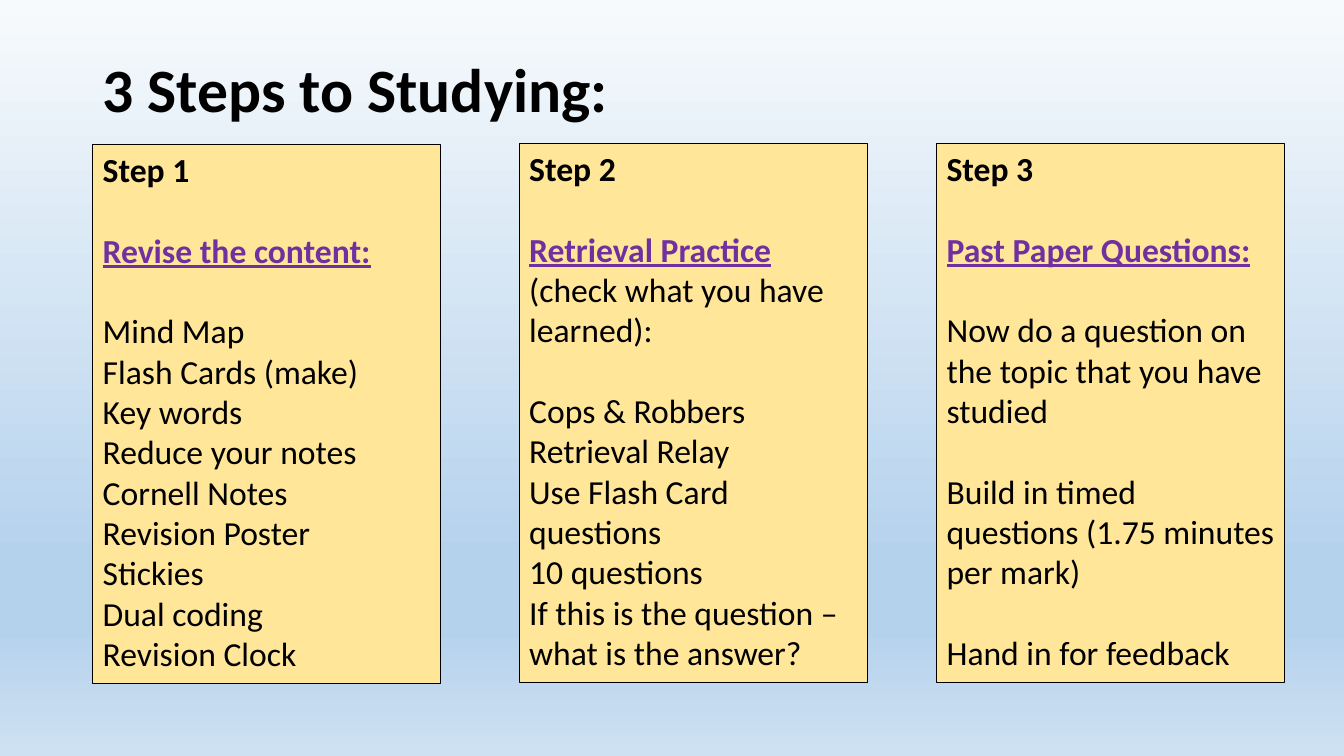
from lxml.etree import SubElement
from pptx import Presentation
from pptx.dml.color import RGBColor as RGB
from pptx.enum.shapes import MSO_SHAPE as Shape
from pptx.enum.text import MSO_ANCHOR as Anchor, MSO_AUTO_SIZE as Auto, PP_ALIGN as Align
from pptx.oxml.ns import qn
from pptx.util import Inches, Pt

COLORS = {"ink": "000000", "head": "7030A0", "card": "FFE699"}
SKY = [(0, "F7FAFD"), (74, "B5D2EC"), (83, "B5D2EC"), (100, "CEE1F2")]

# Each step: left, top, heading, rest of the heading line, groups of lines
STEPS = [
    (0.92, 1.43, "Revise the content:", "", [
        ["Mind Map", "Flash Cards (make)", "Key words", "Reduce your notes",
         "Cornell Notes", "Revision Poster", "Stickies", "Dual coding",
         "Revision Clock"]]),
    (5.15, 1.42, "Retrieval Practice ", "(check what you have learned):", [
        ["Cops & Robbers", "Retrieval Relay", "Use Flash Card questions",
         "10 questions", "If this is the question – what is the answer?"]]),
    (9.29, 1.42, "Past Paper Questions:", "", [
        ["Now do a question on the topic that you have studied"],
        ["Build in timed questions (1.75 minutes per mark)"],
        ["Hand in for feedback"]]),
]


class Deck:
    font = "Calibri"
    size = 24
    gap = 28.8  # height of one line of text, in points

    def __init__(self):
        self.prs = Presentation()
        self.prs.slide_width = Inches(13.33)
        self.prs.slide_height = Inches(7.5)
        self.slide = self.prs.slides.add_slide(self.prs.slide_layouts[6])

    def sky(self, stops):
        fill = self.slide.background.fill
        fill.gradient()
        fill.gradient_angle = 270
        bag = next(self.slide.background._cSld.iter(qn("a:gsLst")))
        for stop in list(bag):
            bag.remove(stop)
        for pos, color in stops:
            stop = SubElement(bag, qn("a:gs"), pos=str(pos * 1000))
            SubElement(stop, qn("a:srgbClr"), val=color)

    def run(self, para, text, size=size, color="ink", bold=False, line=False):
        run = para.add_run()
        run.text = text
        font = run.font
        font.name, font.size = self.font, Pt(size)
        font.bold, font.underline = bold, line
        font.color.rgb = RGB.from_string(COLORS[color])

    def title(self, text, left, top, width, height):
        box = self.slide.shapes.add_textbox(
            Inches(left), Inches(top), Inches(width), Inches(height))
        frame = box.text_frame
        frame.word_wrap = True
        frame.vertical_anchor = Anchor.MIDDLE
        para = frame.paragraphs[0]
        para.line_spacing = 0.9
        self.run(para, text, size=44, bold=True)

    def card(self, name, left, top, head, tail, groups):
        box = self.slide.shapes.add_shape(
            Shape.RECTANGLE, Inches(left), Inches(top), Inches(3.45), Inches(5.35))
        box.shadow.inherit = False
        box.fill.solid()
        box.fill.fore_color.rgb = RGB.from_string(COLORS["card"])
        box.line.color.rgb = RGB.from_string(COLORS["ink"])
        box.line.width = Pt(0.75)
        frame = box.text_frame
        frame.word_wrap = True
        frame.auto_size = Auto.SHAPE_TO_FIT_TEXT
        frame.vertical_anchor = Anchor.TOP

        # Step label and heading
        para = frame.paragraphs[0]
        para.alignment = Align.LEFT
        self.run(para, name, bold=True)
        para = self.add(frame, True)
        self.run(para, head, color="head", bold=True, line=True)
        if tail:
            self.run(para, tail)

        # Lines, with a gap above each group
        for group in groups:
            for i, text in enumerate(group):
                self.run(self.add(frame, i == 0), text)

    def add(self, frame, apart):
        para = frame.add_paragraph()
        para.alignment = Align.LEFT
        para.space_before = Pt(self.gap if apart else 0)
        return para


def main():
    deck = Deck()
    deck.sky(SKY)
    deck.title("3 Steps to Studying:", 0.92, 0.19, 6.14, 1.45)
    for num, step in enumerate(STEPS, 1):
        deck.card(f"Step {num}", *step)
    deck.prs.save("out.pptx")


if __name__ == "__main__":
    main()
